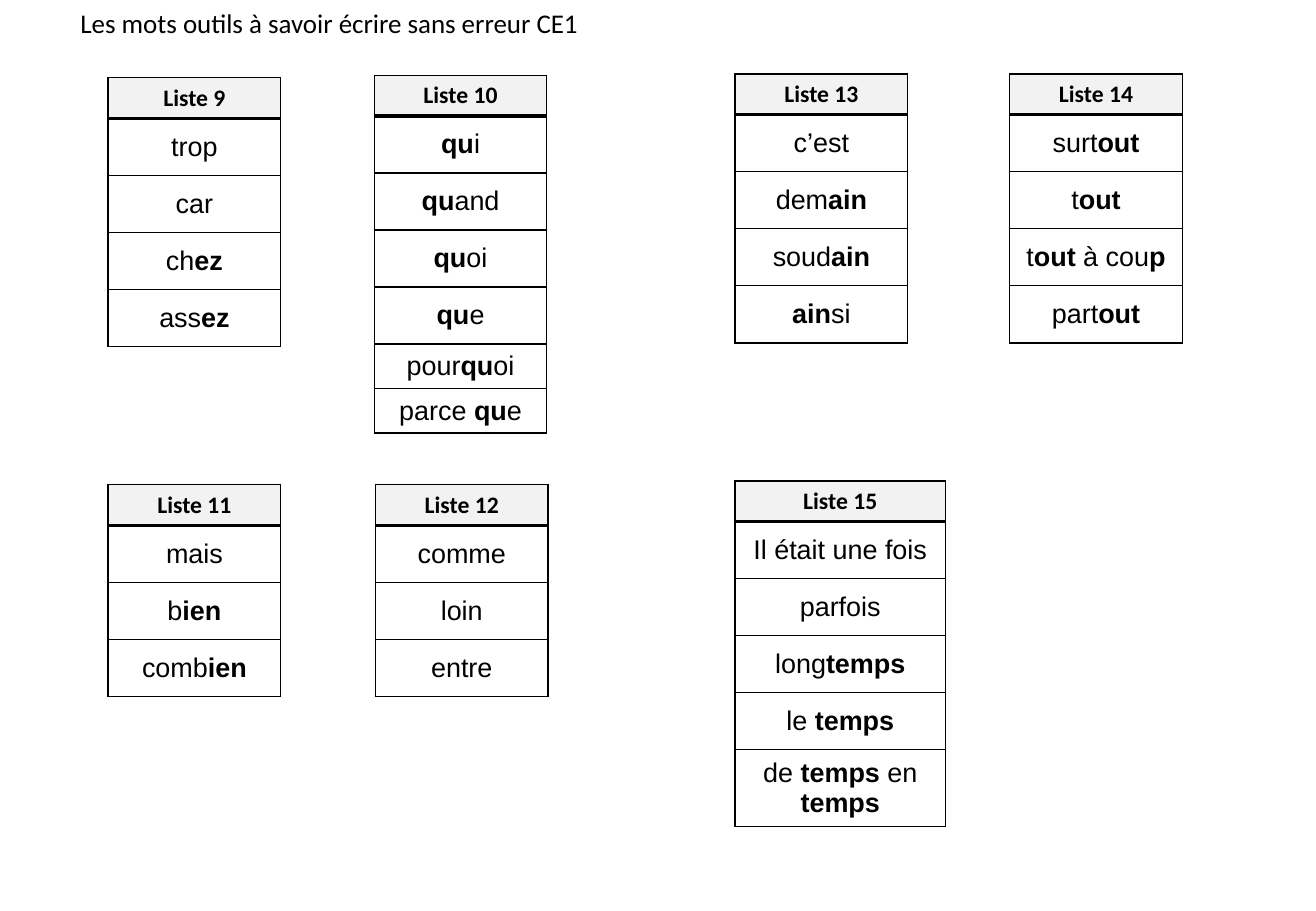
from lxml import etree
from pptx import Presentation
from pptx.dml.color import RGBColor
from pptx.enum.text import MSO_ANCHOR, MSO_AUTO_SIZE, PP_ALIGN
from pptx.oxml.ns import qn
from pptx.util import Inches, Pt

CENTER = PP_ALIGN.CENTER
MIDDLE = MSO_ANCHOR.MIDDLE
FIT_SHAPE = MSO_AUTO_SIZE.SHAPE_TO_FIT_TEXT
BLACK = RGBColor(0x00, 0x00, 0x00)
WHITE = RGBColor(0xFF, 0xFF, 0xFF)
HEADER_GREY = RGBColor(0xF2, 0xF2, 0xF2)

HEADER_HEIGHT = 0.31
WORD_HEIGHT = 0.47
SHORT_HEIGHT = 0.23
THIN = 1
THICK = 2.25

WORD_LISTS = [
    ("Liste 9", 0.89, 0.64, 1.42, ["trop", "car", "ch*ez", "ass*ez"]),
    ("Liste 10", 3.08, 0.62, 1.42,
     ["*qu*i", "*qu*and", "*qu*oi", "*qu*e", "pour*qu*oi", "parce *qu*e"]),
    ("Liste 11", 0.89, 3.99, 1.42, ["mais", "b*ien", "comb*ien"]),
    ("Liste 12", 3.09, 3.99, 1.42, ["comme", "loin", "entre"]),
    ("Liste 13", 6.05, 0.61, 1.42, ["c’est", "dem*ain", "soud*ain", "*ain*si"]),
    ("Liste 14", 8.31, 0.61, 1.42,
     ["surt*out", "t*out", "t*out* à cou*p", "part*out"]),
    ("Liste 15", 6.05, 3.96, 1.73,
     ["Il était une fois", "parfois", "long*temps", "le *temps",
      "de *temps* en *temps"]),
]


def set_borders(cell, top, bottom):
    properties = cell._tc.get_or_add_tcPr()
    for side, width in (("L", THIN), ("R", THIN), ("T", top), ("B", bottom)):
        line = etree.SubElement(properties, qn(f"a:ln{side}"), w=str(Pt(width)))
        fill = etree.SubElement(line, qn("a:solidFill"))
        etree.SubElement(fill, qn("a:srgbClr"), val=str(BLACK))


def write_cell(cell, marked_text, font_name, size, background):
    cell.fill.solid()
    cell.fill.fore_color.rgb = background
    cell.vertical_anchor = MIDDLE
    paragraph = cell.text_frame.paragraphs[0]
    paragraph.alignment = CENTER
    paragraph.font.name = font_name
    paragraph.font.size = Pt(size)
    paragraph.font.color.rgb = BLACK
    for position, part in enumerate(marked_text.split("*")):
        if part:
            run = paragraph.add_run()
            run.text = part
            run.font.bold = position % 2 == 1


prs = Presentation()
prs.slide_width = Inches(10.83)
prs.slide_height = Inches(7.5)
slide = prs.slides.add_slide(prs.slide_layouts[5])

title = slide.shapes.title
title.left, title.top = Inches(0), Inches(0)
title.width, title.height = Inches(5.42), Inches(0.37)
title.text_frame.text = "Les mots outils à savoir écrire sans erreur CE1"
title.text_frame.auto_size = FIT_SHAPE
heading = title.text_frame.paragraphs[0]
heading.alignment = CENTER
heading.font.name = "Calibri"
heading.font.size = Pt(16)
heading.font.color.rgb = BLACK

for name, left, top, width, words in WORD_LISTS:
    heights = [HEADER_HEIGHT] + [
        WORD_HEIGHT if number < 5 or name == "Liste 15" else SHORT_HEIGHT
        for number in range(1, len(words) + 1)
    ]
    table = slide.shapes.add_table(
        len(heights), 1, Inches(left), Inches(top), Inches(width), Inches(sum(heights))
    ).table
    table.horz_banding = False
    for row, height in zip(table.rows, heights):
        row.height = Inches(height)

    header = table.cell(0, 0)
    set_borders(header, THIN, THICK)
    write_cell(header, f"*{name}", "Calibri", 14, HEADER_GREY)
    for number, word in enumerate(words, 1):
        cell = table.cell(number, 0)
        set_borders(cell, THICK if number == 1 else THIN, THIN)
        write_cell(cell, word, "Arial", 16, WHITE)

prs.save("out.pptx")
